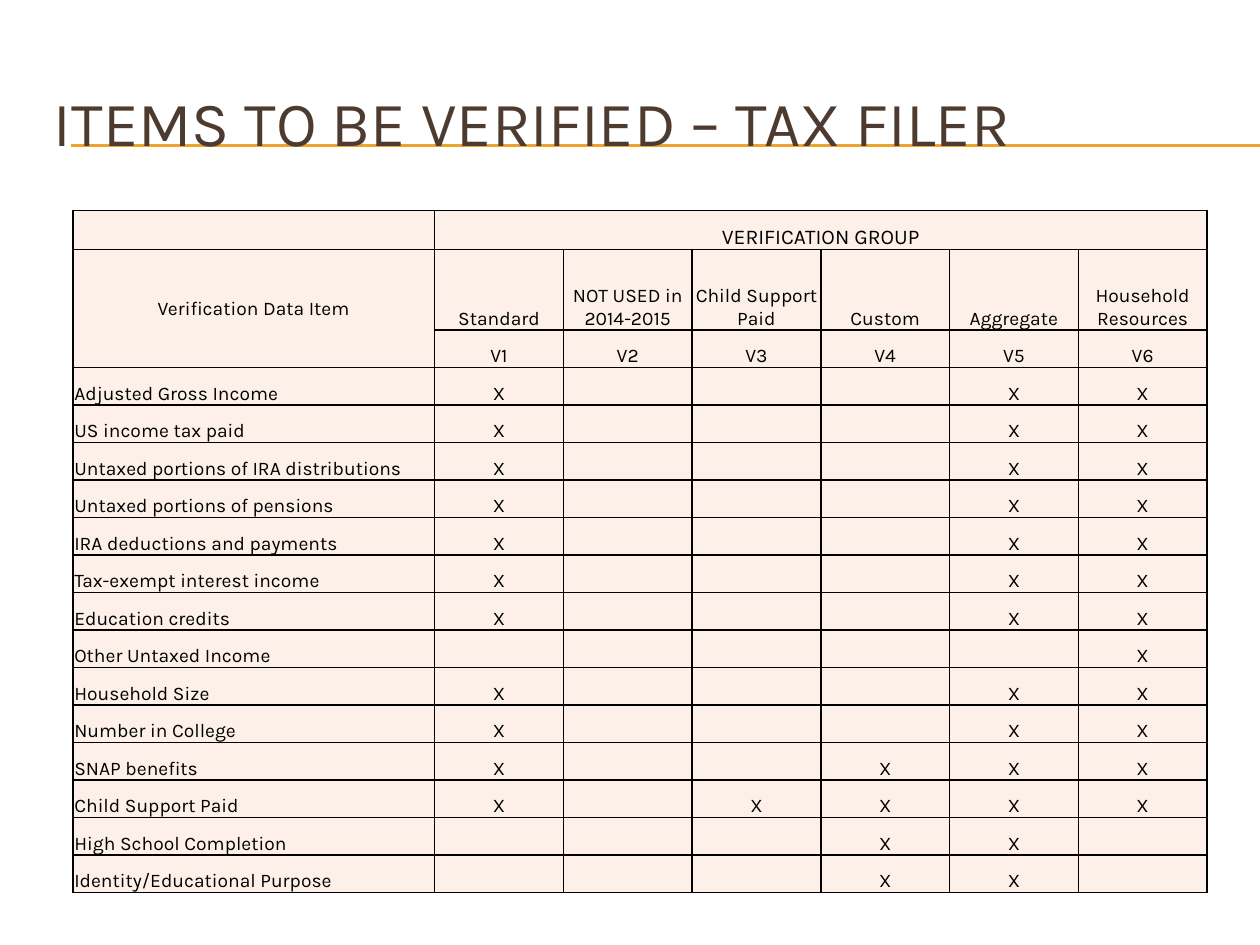
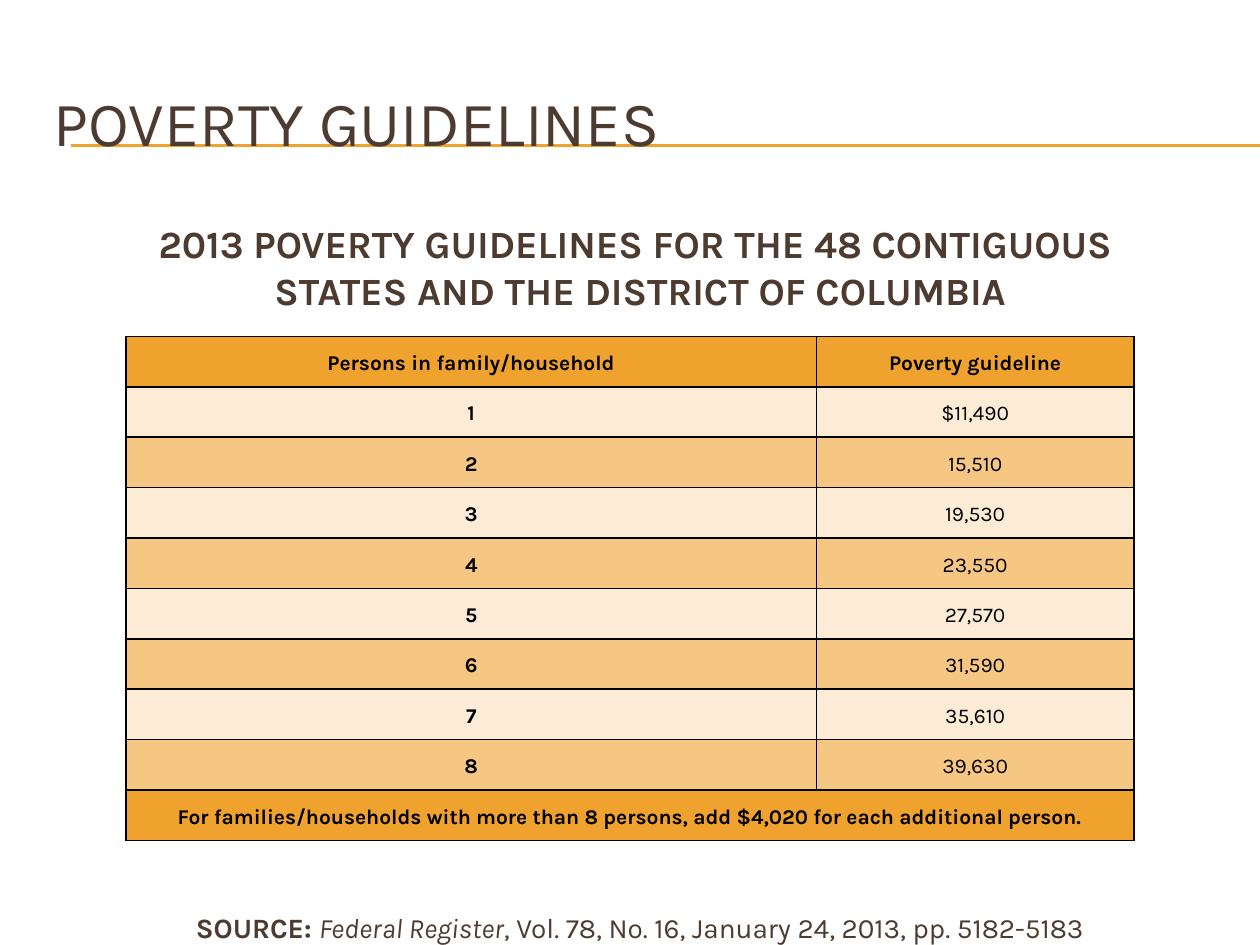
from lxml import etree
from pptx import Presentation
from pptx.dml.color import RGBColor
from pptx.enum.shapes import MSO_CONNECTOR
from pptx.enum.text import MSO_ANCHOR, PP_ALIGN
from pptx.oxml.ns import qn
from pptx.util import Inches, Pt

LEFT, CENTER = PP_ALIGN.LEFT, PP_ALIGN.CENTER
TOP, MIDDLE, BOTTOM = MSO_ANCHOR.TOP, MSO_ANCHOR.MIDDLE, MSO_ANCHOR.BOTTOM
STRAIGHT = MSO_CONNECTOR.STRAIGHT

FONT = "Karla"
BROWN, ORANGE, BLACK = "4E3B30", "F0A22E", "000000"
PALE_ORANGE, MID_ORANGE, CREAM = "FCECD5", "F6C782", "FCF0E8"

GROUPS = ["Standard", "NOT USED in 2014-2015", "Child Support Paid",
          "Custom", "Aggregate", "Household Resources"]

# Each data item with the numbers of the groups that verify it
VERIFIED_ITEMS = [
    ("Adjusted Gross Income", "156"),
    ("US income tax paid", "156"),
    ("Untaxed portions of IRA distributions", "156"),
    ("Untaxed portions of pensions", "156"),
    ("IRA deductions and payments", "156"),
    ("Tax-exempt interest income", "156"),
    ("Education credits", "156"),
    ("Other Untaxed Income", "6"),
    ("Household Size", "156"),
    ("Number in College", "156"),
    ("SNAP benefits", "1456"),
    ("Child Support Paid", "13456"),
    ("High School Completion", "45"),
    ("Identity/Educational Purpose", "45"),
]

GUIDELINES = ["$11,490", "15,510", "19,530", "23,550",
              "27,570", "31,590", "35,610", "39,630"]


def color(hex_string):
    return RGBColor.from_string(hex_string)


def write_text(frame, text, size=12, fill=BLACK, bold=False, align=LEFT,
               anchor=TOP, margins=(0.1, 0.05, 0.1, 0.05), spacing=None):
    """Write a string, or a list of (string, bold, italic) runs, as one paragraph."""
    frame.word_wrap = True
    frame.vertical_anchor = anchor
    (frame.margin_left, frame.margin_top,
     frame.margin_right, frame.margin_bottom) = map(Inches, margins)
    paragraph = frame.paragraphs[0]
    paragraph.alignment = align
    if spacing:
        paragraph.line_spacing = spacing
    runs = [(text, bold, False)] if isinstance(text, str) else text
    for content, is_bold, is_italic in runs:
        for index, line in enumerate(content.split("\n")):
            if index:
                paragraph.add_line_break()
            if line:
                run = paragraph.add_run()
                run.text = line
                font = run.font
                font.name, font.size = FONT, Pt(size)
                font.bold, font.italic = is_bold, is_italic
                font.color.rgb = color(fill)
    end = etree.SubElement(paragraph._p, qn("a:endParaRPr"))
    end.set("sz", str(size * 100))


class Deck:
    def __init__(self):
        self.presentation = Presentation()
        self.presentation.slide_width = Inches(10)
        self.presentation.slide_height = Inches(7.5)
        self.slide = None

    def add_slide(self, title):
        layout = self.presentation.slide_layouts[6]
        self.slide = self.presentation.slides.add_slide(layout)
        for y in (1.15, 1.16):
            self.rule(0.56, 10, y)
        self.text(0.33, 0.5, 9.5, 0.92, title, size=36, anchor=MIDDLE)

    def rule(self, start, end, y):
        line = self.slide.shapes.add_connector(
            STRAIGHT, Inches(start), Inches(y), Inches(end), Inches(y))
        line.line.color.rgb = color(ORANGE)
        line.line.width = Pt(0.75)
        etree.SubElement(line._element.spPr, qn("a:effectLst"))

    def text(self, left, top, width, height, text, **text_format):
        box = self.slide.shapes.add_textbox(
            Inches(left), Inches(top), Inches(width), Inches(height))
        write_text(box.text_frame, text, fill=BROWN, **text_format)

    def table(self, left, top, widths, heights):
        table = self.slide.shapes.add_table(
            len(heights), len(widths), Inches(left), Inches(top),
            Inches(sum(widths)), Inches(sum(heights))).table
        for column, width in zip(table.columns, widths):
            column.width = Inches(width)
        for row, height in zip(table.rows, heights):
            row.height = Inches(height)
        return table

    def cell(self, cell, text, background, margins, **text_format):
        write_text(cell.text_frame, text, **text_format)
        cell.vertical_anchor = text_format["anchor"]
        (cell.margin_left, cell.margin_top,
         cell.margin_right, cell.margin_bottom) = map(Inches, margins)
        self.borders(cell)
        cell.fill.solid()
        cell.fill.fore_color.rgb = color(background)

    def borders(self, cell):
        properties = cell._tc.get_or_add_tcPr()
        for side in ("lnL", "lnR", "lnT", "lnB"):
            line = etree.SubElement(properties, qn(f"a:{side}"), w=str(Pt(1)))
            solid = etree.SubElement(line, qn("a:solidFill"))
            etree.SubElement(solid, qn("a:srgbClr"), val=BLACK)


def add_items_slide(deck):
    deck.add_slide("ITEMS TO BE VERIFIED – TAX FILER")
    group_count = len(GROUPS)
    rows = [["", "VERIFICATION GROUP"] + [""] * (group_count - 1),
            ["Verification Data Item"] + GROUPS,
            [""] + [f"V{number}" for number in range(1, group_count + 1)]]
    for item, groups in VERIFIED_ITEMS:
        rows.append([item] + ["X" if str(number) in groups else ""
                              for number in range(1, group_count + 1)])

    header_heights = [0.31, 0.64]
    plain_rows = len(rows) - len(header_heights)
    plain_height = (5.42 - sum(header_heights)) / plain_rows
    table = deck.table(0.58, 1.67,
                       [2.87] + [(9 - 2.87) / group_count] * group_count,
                       header_heights + [plain_height] * plain_rows)
    table.cell(0, 1).merge(table.cell(0, group_count))
    table.cell(1, 0).merge(table.cell(2, 0))
    for row, values in enumerate(rows):
        for column, value in enumerate(values):
            is_item = column == 0 and row > 2
            deck.cell(table.cell(row, column), value, CREAM, (0.01, 0.01, 0.01, 0),
                      size=12 if row == 0 else 11,
                      align=LEFT if is_item else CENTER,
                      anchor=MIDDLE if (row, column) == (1, 0) else BOTTOM)


def add_poverty_slide(deck):
    deck.add_slide("POVERTY GUIDELINES")
    deck.text(0.33, 1.7, 9.5, 0.9,
              "2013 POVERTY GUIDELINES FOR THE 48 CONTIGUOUS \n"
              "STATES AND THE DISTRICT OF COLUMBIA",
              size=22, bold=True, align=CENTER)

    rows = [("Persons in family/household", "Poverty guideline")]
    rows += [(str(persons), amount) for persons, amount in enumerate(GUIDELINES, 1)]
    rows.append(("For families/households with more than 8 persons, "
                 "add $4,020 for each additional person.", ""))
    last = len(rows) - 1
    table = deck.table(1, 2.67, [5.48, 2.52], [0.4] * len(rows))
    table.cell(last, 0).merge(table.cell(last, 1))
    for row, values in enumerate(rows):
        is_edge = row in (0, last)
        band = PALE_ORANGE if row % 2 else MID_ORANGE
        for column, value in enumerate(values):
            deck.cell(table.cell(row, column), value, ORANGE if is_edge else band,
                      (0.02,) * 4, bold=is_edge or column == 0, align=CENTER,
                      anchor=MIDDLE, spacing=1.15)

    deck.text(0.33, 7.23, 9.5, 0.27,
              [("SOURCE: ", True, False), ("Federal Register", False, True),
               (", Vol. 78, No. 16, January 24, 2013, pp. 5182-5183", False, False)],
              size=16, align=CENTER, margins=(0.1, 0, 0.1, 0))


def main():
    deck = Deck()
    add_items_slide(deck)
    add_poverty_slide(deck)
    deck.presentation.save("out.pptx")


if __name__ == "__main__":
    main()
